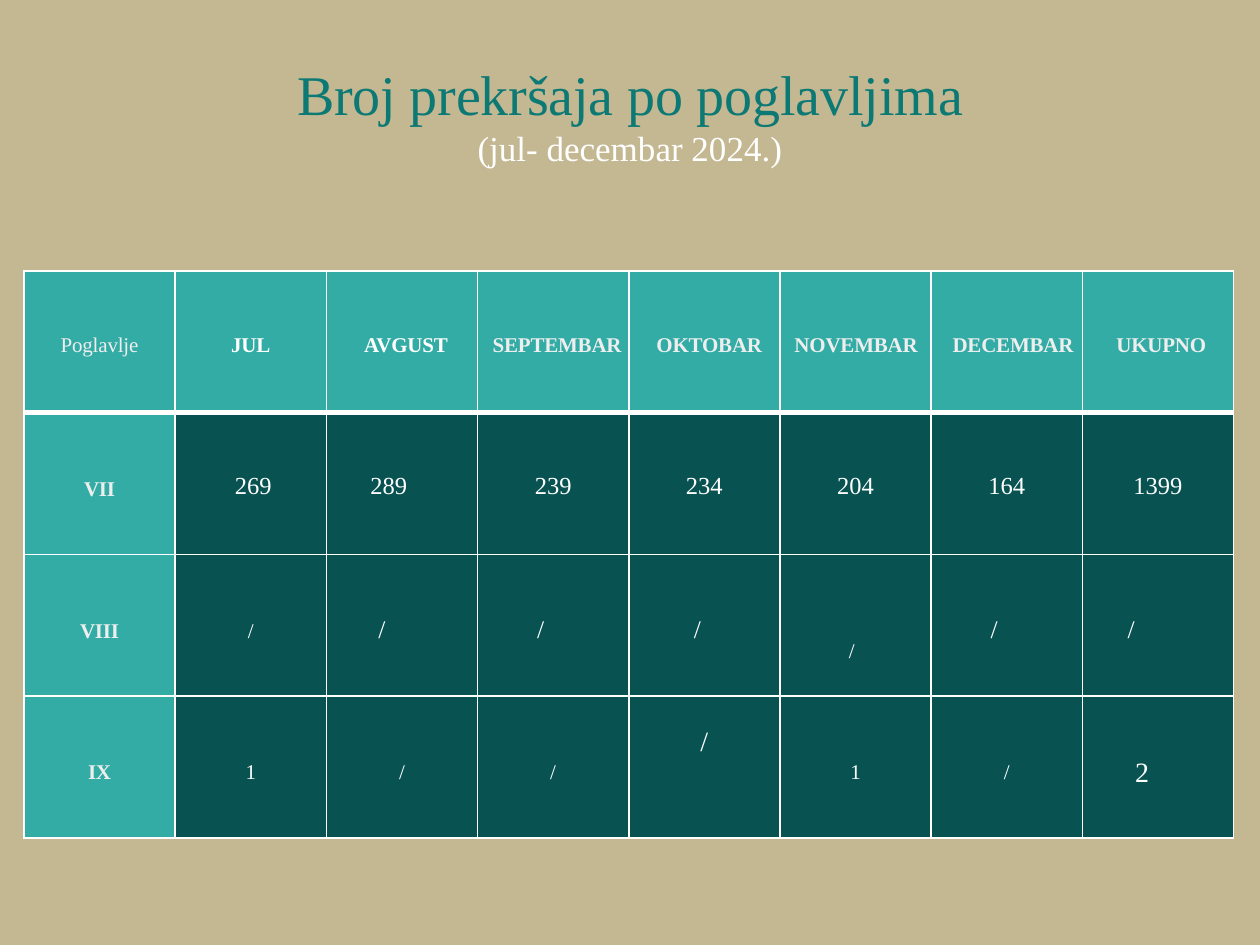
from dataclasses import dataclass

from lxml import etree
from pptx import Presentation
from pptx.dml.color import RGBColor
from pptx.enum.text import MSO_ANCHOR, PP_ALIGN
from pptx.oxml.ns import qn
from pptx.util import Inches, Pt

CENTER, LEFT = PP_ALIGN.CENTER, PP_ALIGN.LEFT
BOTTOM, TOP = MSO_ANCHOR.BOTTOM, MSO_ANCHOR.TOP
SLIDE_WIDTH, SLIDE_HEIGHT = Inches(10), Inches(7.5)


@dataclass(frozen=True)
class Theme:
    font: str = "Times New Roman"
    background: str = "C4B892"
    title: str = "0D7974"
    label_fill: str = "33ACA6"
    value_fill: str = "095252"
    white: str = "FFFFFF"
    soft_white: str = "EEEEEE"
    title_size: float = 32
    subtitle_size: float = 20
    label_size: float = 12
    value_size: float = 14
    mark_size: float = 14.5
    large_size: float = 16
    thin_line: float = 1
    header_line: float = 3


THEME = Theme()


@dataclass(frozen=True)
class Entry:
    """A cell's text; top, left and right are its margins in inches."""
    text: str
    top: float
    size: float = THEME.label_size
    left: float = 0
    right: float = 0
    align: PP_ALIGN = CENTER
    color: str = THEME.white
    bold: bool = False
    spacing: float = 0


def month(text: str, left: float = 0, align: PP_ALIGN = LEFT,
          color: str = THEME.soft_white, bold: bool = True) -> Entry:
    return Entry(text, 0.5, left=left, align=align, color=color, bold=bold, spacing=-0.1)


def chapter(text: str, top: float) -> Entry:
    return Entry(text, top, color=THEME.soft_white, bold=True, spacing=-0.1)


def count(text: str, left: float = 0, align: PP_ALIGN = CENTER) -> Entry:
    return Entry(text, 0.48, THEME.value_size, left, align=align)


def mark(right: float = 0, left: float = 0, align: PP_ALIGN = CENTER) -> Entry:
    return Entry("/", 0.49, THEME.mark_size, left, right, align)


def small(text: str, top: float = 0.51, right: float = 0) -> Entry:
    return Entry(text, top, right=right)


ROWS = [
    [month("Poglavlje", align=CENTER, bold=False),
     month("JUL", align=CENTER, color=THEME.white),
     month("AVGUST", 0.3, color=THEME.white), month("SEPTEMBAR", 0.12),
     month("OKTOBAR", 0.22), month("NOVEMBAR", 0.01, CENTER),
     month("DECEMBAR", 0.17), month("UKUPNO", 0.27)],
    [chapter("VII", 0.52), count("269", 0.04), count("289", 0.35, LEFT),
     count("239"), count("234"), count("204"), count("164"), count("1399")],
    [chapter("VIII", 0.52), small("/", 0.52), mark(0.32), mark(0.2), mark(0.11),
     small("/", 0.68, 0.06), mark(0.2), mark(left=0.36, align=LEFT)],
    [chapter("IX", 0.51), small("1"), small("/"), small("/"),
     Entry("/", 0.24, THEME.large_size), small("1"), small("/"),
     Entry("2", 0.49, THEME.large_size, right=0.25)],
]


def add_run(paragraph, text: str, size: float, color: str,
            bold: bool = False, spacing: float = 0) -> None:
    run = paragraph.add_run()
    run.text = text
    run.font.name = THEME.font
    run.font.size = Pt(size)
    run.font.bold = bold
    run.font.color.rgb = RGBColor.from_string(color)
    if spacing:
        run._r.get_or_add_rPr().set("spc", str(round(spacing * 100)))


def add_title(slide) -> None:
    box = slide.shapes.add_textbox(Inches(0.42), Inches(-0.03), Inches(9.16), Inches(1.37))
    frame = box.text_frame
    frame.word_wrap = True
    frame.vertical_anchor = BOTTOM
    frame.margin_left = frame.margin_right = frame.margin_top = frame.margin_bottom = 0
    heading = frame.paragraphs[0]
    heading.alignment = CENTER
    add_run(heading, "Broj prekršaja po poglavljima", THEME.title_size, THEME.title, spacing=-0.1)
    period = frame.add_paragraph()
    period.alignment = CENTER
    period.space_before = Pt(0.2)
    add_run(period, "(jul- decembar 2024.)", THEME.subtitle_size, THEME.white)


def set_borders(cell, top: float, bottom: float) -> None:
    """Draw white cell edges; widths are in points."""
    properties = cell._tc.get_or_add_tcPr()
    widths = {"a:lnL": THEME.thin_line, "a:lnR": THEME.thin_line, "a:lnT": top, "a:lnB": bottom}
    for position, (tag, width) in enumerate(widths.items()):
        line = etree.Element(qn(tag), w=str(Pt(width)))
        fill = etree.SubElement(line, qn("a:solidFill"))
        etree.SubElement(fill, qn("a:srgbClr"), val=THEME.white)
        properties.insert(position, line)


def fill_cell(cell, entry: Entry, fill: str) -> None:
    cell.fill.solid()
    cell.fill.fore_color.rgb = RGBColor.from_string(fill)
    cell.vertical_anchor = TOP
    cell.margin_top, cell.margin_bottom = Inches(entry.top), 0
    cell.margin_left, cell.margin_right = Inches(entry.left), Inches(entry.right)
    paragraph = cell.text_frame.paragraphs[0]
    paragraph.alignment = entry.align
    add_run(paragraph, entry.text, entry.size, entry.color, entry.bold, entry.spacing)


def add_offence_table(slide) -> None:
    frame = slide.shapes.add_table(len(ROWS), len(ROWS[0]), Inches(0.19), Inches(2.15),
                                   Inches(9.6), Inches(4.5))
    table = frame.table
    table.first_row = table.horz_banding = False
    for row, entries in enumerate(ROWS):
        for column, entry in enumerate(entries):
            cell = table.cell(row, column)
            is_label = row == 0 or column == 0
            fill_cell(cell, entry, THEME.label_fill if is_label else THEME.value_fill)
            set_borders(cell,
                        top=THEME.header_line if row == 1 else THEME.thin_line,
                        bottom=THEME.header_line if row == 0 else THEME.thin_line)


def main() -> None:
    presentation = Presentation()
    presentation.slide_width, presentation.slide_height = SLIDE_WIDTH, SLIDE_HEIGHT
    slide = presentation.slides.add_slide(presentation.slide_layouts[6])
    slide.background.fill.solid()
    slide.background.fill.fore_color.rgb = RGBColor.from_string(THEME.background)
    add_title(slide)
    add_offence_table(slide)
    presentation.save("out.pptx")


if __name__ == "__main__":
    main()
